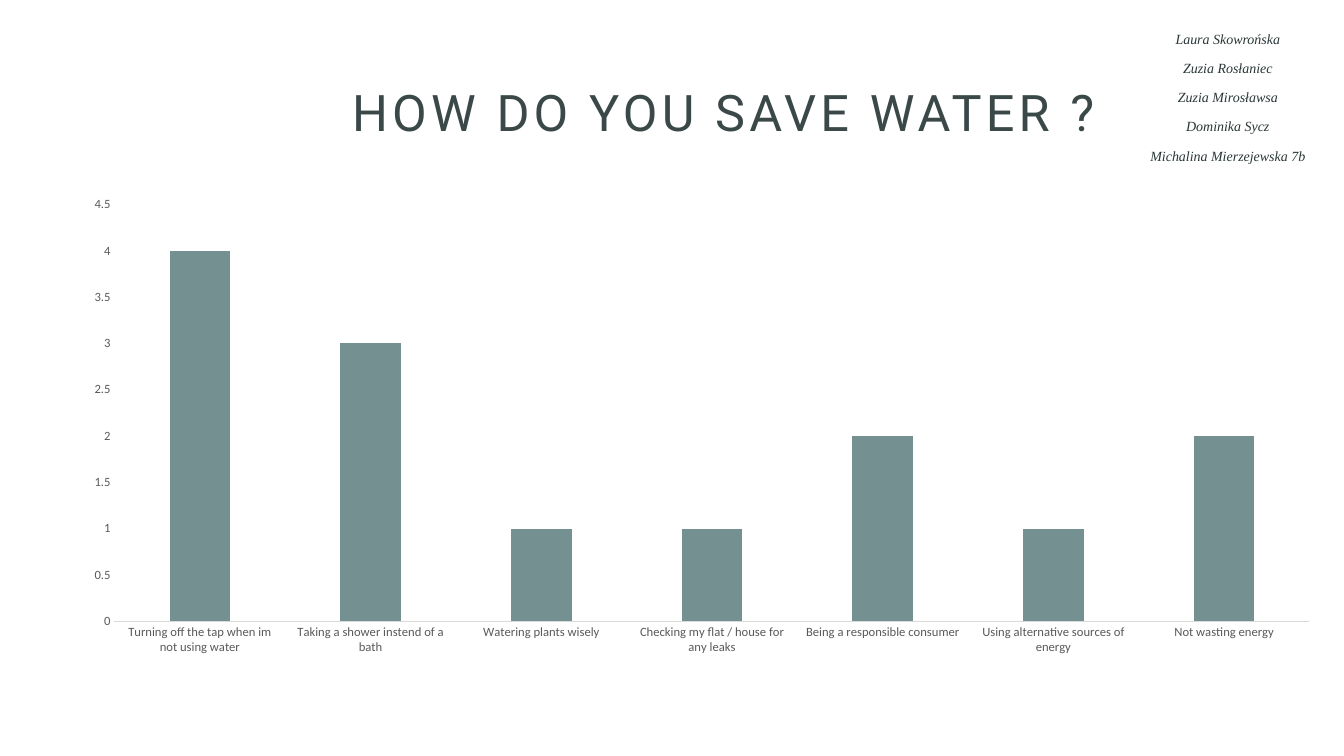
"""Build a slide with a column chart of ways to save water."""
from lxml.etree import SubElement
from pptx import Presentation
from pptx.chart.data import CategoryChartData
from pptx.dml.color import RGBColor
from pptx.enum.chart import XL_CHART_TYPE, XL_TICK_MARK
from pptx.enum.text import MSO_ANCHOR, MSO_AUTO_SIZE, PP_ALIGN
from pptx.oxml.ns import qn
from pptx.util import Pt

AUTHORS = [
    "Laura Skowrońska",
    "Zuzia Rosłaniec",
    "Zuzia Mirosławsa",
    "Dominika Sycz",
    "Michalina Mierzejewska 7b",
]
ANSWERS = {
    "Turning off the tap when im not using water": 4,
    "Taking a shower instend of a bath": 3,
    "Watering plants wisely": 1,
    "Checking my flat / house for any leaks": 1,
    "Being a responsible consumer": 2,
    "Using alternative sources of energy": 1,
    "Not wasting energy": 2,
}


def color(hex_code):
    return RGBColor.from_string(hex_code)


class SlideBuilder:
    title_color = "3A4848"
    author_color = "293737"
    column_color = "749090"
    label_color = "595959"
    axis_color = "D9D9D9"
    background = "FFFFFF"

    def __init__(self, deck):
        self.slide = deck.slides.add_slide(deck.slide_layouts[0])
        fill = self.slide.background.fill
        fill.solid()
        fill.fore_color.rgb = color(self.background)

    def style_font(self, font, name, size, hex_code, italic=False):
        font.name = name
        font.size = Pt(size)
        font.color.rgb = color(hex_code)
        font.italic = italic

    def fill_placeholder(self, index, lines, box, anchor, font_style, space_before=0, tracking=0):
        holder = self.slide.placeholders[index]
        holder.left, holder.top, holder.width, holder.height = map(Pt, box)
        frame = holder.text_frame
        frame.text = "\n".join(lines)
        frame.word_wrap = True
        frame.auto_size = MSO_AUTO_SIZE.NONE
        frame.vertical_anchor = anchor
        for paragraph in frame.paragraphs:
            paragraph.alignment = PP_ALIGN.CENTER
            paragraph.line_spacing = 0.9
            paragraph.space_before = Pt(space_before)
            self.style_font(paragraph.font, *font_style)
            if tracking:
                paragraph._p.pPr.find(qn("a:defRPr")).set("spc", str(tracking * 100))

    def title(self, text, box):
        self.fill_placeholder(0, [text], box, MSO_ANCHOR.BOTTOM,
                              ("Roboto", 36, self.title_color), tracking=3)

    def authors(self, names, box):
        self.fill_placeholder(1, names, box, MSO_ANCHOR.TOP,
                              ("Times New Roman", 10, self.author_color, True), space_before=10)

    def column_chart(self, answers, box, plot_area):
        data = CategoryChartData()
        data.categories = list(answers)
        data.add_series("Series 1", list(answers.values()))
        chart = self.slide.shapes.add_chart(
            XL_CHART_TYPE.COLUMN_CLUSTERED, *map(Pt, box), data).chart
        chart.has_legend = False
        chart.has_title = False
        self.style_font(chart.font, "Calibri", 10, "000000")

        plot = chart.plots[0]
        plot.gap_width = 182
        plot.vary_by_categories = False
        columns = plot.series[0].format.fill
        columns.solid()
        columns.fore_color.rgb = color(self.column_color)

        for axis in (chart.category_axis, chart.value_axis):
            axis.major_tick_mark = axis.minor_tick_mark = XL_TICK_MARK.NONE
            self.style_font(axis.tick_labels.font, "Calibri", 9, self.label_color)
        self.style_line(chart.category_axis.format.line, self.axis_color)

        values = chart.value_axis
        values.minimum_scale, values.maximum_scale, values.major_unit = 0, 4.5, 0.5
        values.format.line.fill.background()
        self.style_line(values.major_gridlines.format.line, self.background)
        self.place_plot(chart, plot_area)

    def style_line(self, line, hex_code):
        line.width = Pt(0.75)
        line.color.rgb = color(hex_code)

    def place_plot(self, chart, plot_area):
        area = chart._chartSpace.chart.plotArea
        for layout in area.findall(qn("c:layout")):
            area.remove(layout)
        layout = SubElement(area, qn("c:layout"))
        area.insert(0, layout)
        manual = SubElement(layout, qn("c:manualLayout"))
        settings = {"layoutTarget": "inner", "xMode": "edge", "yMode": "edge",
                    **dict(zip("xywh", plot_area))}
        for tag, value in settings.items():
            SubElement(manual, qn(f"c:{tag}")).set("val", str(value))


def main():
    deck = Presentation()
    deck.slide_width, deck.slide_height = Pt(960), Pt(540)
    builder = SlideBuilder(deck)
    builder.title("HOW DO YOU SAVE WATER ?", (157, -83, 720, 188))
    builder.authors(AUTHORS, (788, 19.5, 178, 105))
    builder.column_chart(ANSWERS, (11.5, 124.5, 937, 349), (0.075, 0.062, 0.911, 0.853))
    deck.save("out.pptx")


if __name__ == "__main__":
    main()
